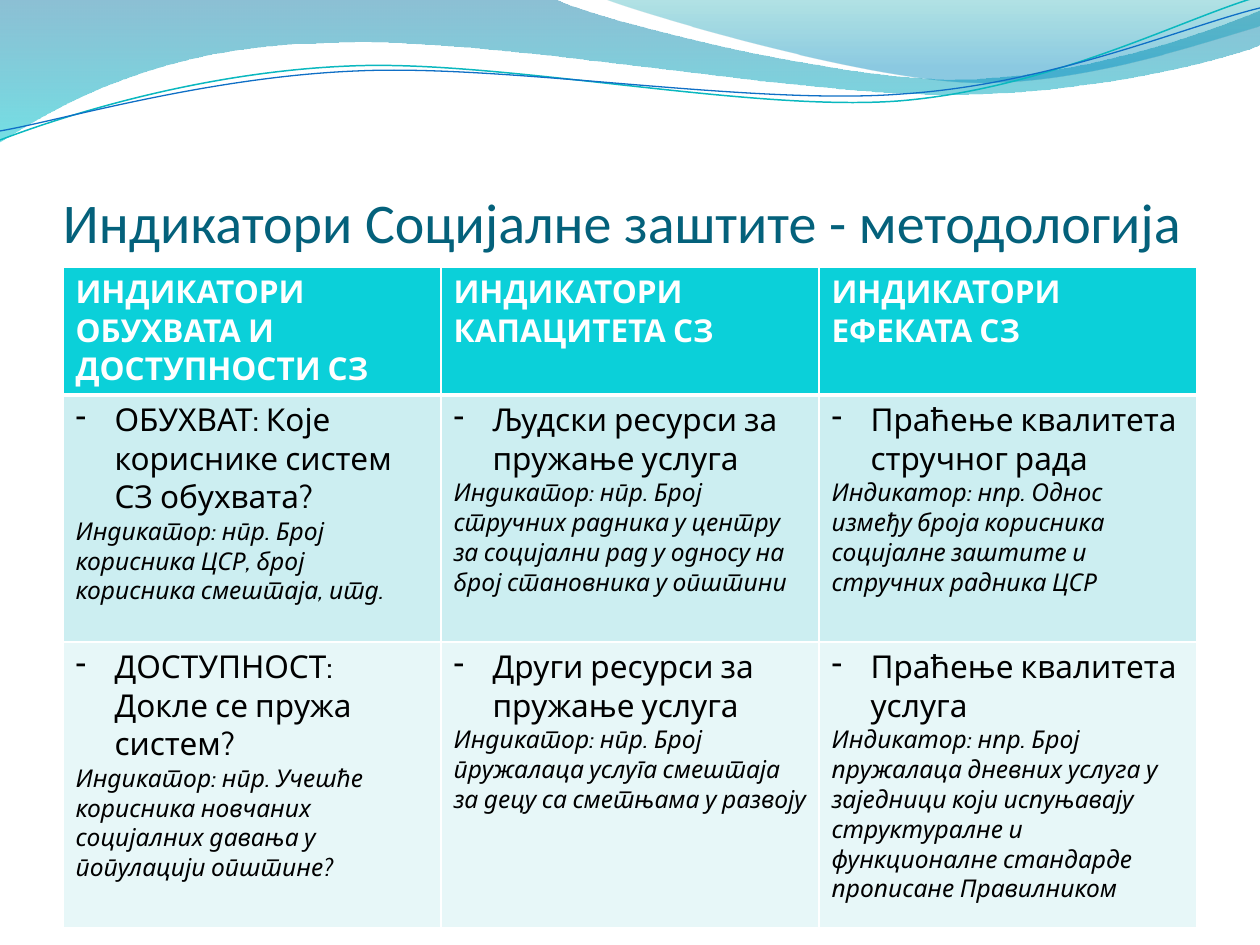
"""Build the slide on social protection indicators and their methodology."""
from dataclasses import dataclass
from itertools import product

from lxml.etree import SubElement
from pptx import Presentation
from pptx.dml.color import RGBColor
from pptx.enum.lang import MSO_LANGUAGE_ID
from pptx.enum.text import MSO_ANCHOR
from pptx.oxml.ns import qn
from pptx.util import Pt

PX = 914400 / 126
COLUMN_WIDTH = 378
ROW_HEIGHTS = (128, 247, 286)
INDENT = 39

WHITE = RGBColor(0xFF, 0xFF, 0xFF)
BLACK = RGBColor(0x00, 0x00, 0x00)
TITLE_TEAL = RGBColor(0x04, 0x61, 0x7B)
HEADER_CYAN = RGBColor(0x0B, 0xD0, 0xD9)
ROW_FILLS = (RGBColor(0xCC, 0xEE, 0xF1), RGBColor(0xE7, 0xF7, 0xF8))
DEEP_BLUE = RGBColor(0x00, 0x74, 0xA1)
AQUA = RGBColor(0x00, 0xC6, 0xCF)
SEA_GREEN = RGBColor(0x00, 0xA1, 0xA9)
SKY_BLUE = RGBColor(0x00, 0x8B, 0xBF)
LINE_TEAL = RGBColor(0x0A, 0xB8, 0xBF)
LINE_BLUE = RGBColor(0x0F, 0x6F, 0xC6)


@dataclass(frozen=True)
class Stop:
    position: float
    color: RGBColor
    opacity: int


@dataclass(frozen=True)
class Wave:
    start: tuple[int, int]
    segments: tuple[tuple[int, ...], ...]
    stops: tuple[Stop, ...] = ()
    line: RGBColor | None = None
    weight: float = 0


@dataclass(frozen=True)
class Indicator:
    topic: str
    example: str


WAVES = (
    Wave((0, 0), ((554, -1), (600, 21, 837, 79, 955, 79), (1074, 79, 1207, 33, 1260, 11),
                  (1261, 45), (1238, 55, 1096, 96, 940, 94), (784, 94, 481, 35, 324, 43),
                  (163, 45, 58, 105, -1, 142)),
         stops=(Stop(0, DEEP_BLUE, 45), Stop(1, AQUA, 55))),
    Wave((604, -1), ((641, 14, 859, 78, 969, 82), (1079, 86, 1211, 40, 1260, 26), (1260, 0)),
         stops=(Stop(0, SEA_GREEN, 30), Stop(0.8, SKY_BLUE, 45))),
    Wave((0, 140), ((60, 117, 199, 72, 349, 66), (498, 59, 747, 112, 898, 101),
                    (1049, 89, 1182, 19, 1257, -3)), line=LINE_TEAL, weight=0.85),
    Wave((0, 131), ((59, 121, 207, 77, 357, 71), (508, 64, 752, 106, 903, 94),
                    (1053, 84, 1186, 26, 1260, 8)), line=LINE_BLUE, weight=0.75),
)

HEADERS = ("ИНДИКАТОРИ ОБУХВАТА И ДОСТУПНОСТИ СЗ", "ИНДИКАТОРИ КАПАЦИТЕТА СЗ",
           "ИНДИКАТОРИ ЕФЕКАТА СЗ")
LANGUAGES = (MSO_LANGUAGE_ID.SERBIAN_CYRILLIC, MSO_LANGUAGE_ID.SERBIAN_CYRILLIC,
             MSO_LANGUAGE_ID.ENGLISH_US)
INDICATORS = (
    (
        Indicator("ОБУХВАТ: Које кориснике систем СЗ обухвата?",
                  "Индикатор: нпр. Број корисника ЦСР, број корисника смештаја, итд."),
        Indicator("Људски ресурси за пружање услуга",
                  "Индикатор: нпр. Број стручних радника у центру за социјални рад "
                  "у односу на број становника у општини"),
        Indicator("Праћење квалитета стручног рада",
                  "Индикатор: нпр. Однос између броја корисника социјалне заштите "
                  "и стручних радника ЦСР"),
    ),
    (
        Indicator("ДОСТУПНОСТ: Докле се пружа систем?",
                  "Индикатор: нпр. Учешће корисника новчаних социјалних давања "
                  "у популацији општине?"),
        Indicator("Други ресурси за пружање услуга",
                  "Индикатор: нпр. Број пружалаца услуга смештаја за децу "
                  "са сметњама у развоју"),
        Indicator("Праћење квалитета услуга",
                  "Индикатор: нпр. Број пружалаца дневних услуга у заједници који испуњавају "
                  "структуралне и функционалне стандарде прописане Правилником"),
    ),
)


def px(length: int) -> int:
    return round(length * PX)


def bend(ribbon, wave: Wave) -> None:
    """Turn the straight segments into Bézier curves."""
    anchors = [wave.start, *(segment[-2:] for segment in wave.segments)]
    left, top = (min(values) for values in zip(*anchors))
    for straight, segment in zip(list(ribbon._element.iter(qn("a:lnTo"))), wave.segments):
        if len(segment) == 2:
            continue
        curve = straight.makeelement(qn("a:cubicBezTo"))
        for x, y in zip(segment[::2], segment[1::2]):
            SubElement(curve, qn("a:pt"), x=str(x - left), y=str(y - top))
        straight.getparent().replace(straight, curve)


def draw_wave(slide, wave: Wave) -> None:
    builder = slide.shapes.build_freeform(*wave.start, scale=PX)
    builder.add_line_segments([segment[-2:] for segment in wave.segments],
                              close=bool(wave.stops))
    ribbon = builder.convert_to_shape()
    bend(ribbon, wave)
    ribbon.shadow.inherit = False
    if not wave.stops:
        ribbon.fill.background()
        ribbon.line.color.rgb = wave.line
        ribbon.line.width = Pt(wave.weight)
        return
    ribbon.line.fill.background()
    ribbon.fill.gradient()
    ribbon.fill.gradient_angle = 270
    for target, stop in zip(ribbon.fill.gradient_stops, wave.stops):
        target.position = stop.position
        target.color.rgb = stop.color
    for color, stop in zip(ribbon._element.spPr.iter(qn("a:srgbClr")), wave.stops):
        SubElement(color, qn("a:alpha"), val=str(stop.opacity * 1000))


def write(paragraph, text: str, size: int, color: RGBColor, name: str = "Cabin",
          bold: bool = False, italic: bool = False) -> None:
    paragraph.text = text
    font = paragraph.font
    font.name, font.size, font.bold, font.italic = name, Pt(size), bold, italic
    font.color.rgb = color


def add_dash(paragraph) -> None:
    properties = paragraph._p.get_or_add_pPr()
    properties.set("marL", str(px(INDENT)))
    properties.set("indent", str(-px(INDENT)))
    SubElement(properties, qn("a:buFontTx"))
    SubElement(properties, qn("a:buChar"), char="-")


def style_cell(cell, row: int, fill: RGBColor) -> None:
    properties = cell._tc.get_or_add_tcPr()
    weights = {"L": 1, "R": 1, "T": 3 if row == 1 else 1, "B": 3 if row == 0 else 1}
    for side, weight in weights.items():
        border = SubElement(properties, qn(f"a:ln{side}"), w=str(Pt(weight)))
        SubElement(SubElement(border, qn("a:solidFill")), qn("a:srgbClr"), val=str(WHITE))
    cell.fill.solid()
    cell.fill.fore_color.rgb = fill


def draw_title(slide) -> None:
    frame = slide.shapes.add_textbox(px(63), px(97), px(1134), px(158)).text_frame
    frame.word_wrap = True
    frame.vertical_anchor = MSO_ANCHOR.BOTTOM
    frame.margin_left = frame.margin_right = frame.margin_bottom = 0
    write(frame.paragraphs[0], "Индикатори Социјалне заштите - методологија", 32,
          TITLE_TEAL, name="Calibri")


def draw_table(slide) -> None:
    rows, columns = len(ROW_HEIGHTS), len(HEADERS)
    table = slide.shapes.add_table(rows, columns, px(63), px(267), px(COLUMN_WIDTH * columns),
                                   px(sum(ROW_HEIGHTS))).table
    for row, height in zip(table.rows, ROW_HEIGHTS):
        row.height = px(height)
    for row, column in product(range(rows), range(columns)):
        cell = table.cell(row, column)
        style_cell(cell, row, (HEADER_CYAN, *ROW_FILLS)[row])
        opening = cell.text_frame.paragraphs[0]
        if row == 0:
            write(opening, HEADERS[column], 18, WHITE, bold=True)
            continue
        indicator = INDICATORS[row - 1][column]
        add_dash(opening)
        write(opening, indicator.topic, 18, BLACK)
        example = cell.text_frame.add_paragraph()
        write(example, indicator.example, 14, BLACK, italic=True)
        example.runs[0].font.language_id = LANGUAGES[column]


def main() -> None:
    presentation = Presentation()
    presentation.slide_width, presentation.slide_height = px(1260), px(945)
    slide = presentation.slides.add_slide(presentation.slide_layouts[6])
    for wave in WAVES:
        draw_wave(slide, wave)
    draw_title(slide)
    draw_table(slide)
    presentation.save("out.pptx")


if __name__ == "__main__":
    main()
